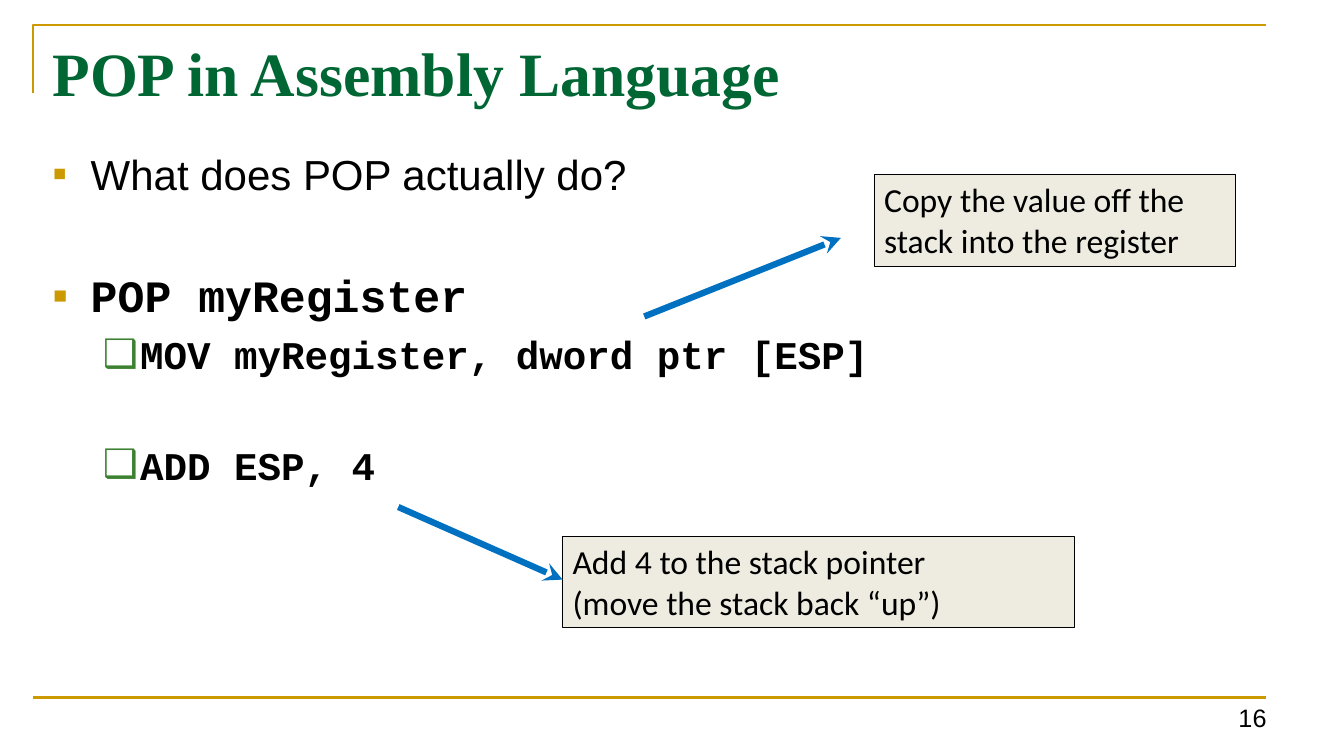
from dataclasses import dataclass

from lxml.etree import SubElement
from pptx import Presentation
from pptx.dml.color import RGBColor
from pptx.enum.shapes import MSO_CONNECTOR as Connector, MSO_SHAPE as Preset
from pptx.enum.text import MSO_ANCHOR as Anchor, MSO_AUTO_SIZE as AutoSize, PP_ALIGN as Align
from pptx.oxml.ns import qn
from pptx.util import Inches, Pt


@dataclass(frozen=True)
class Theme:
    gold: str = "CC9900"
    title_green: str = "006633"
    bullet_green: str = "3B812F"
    arrow_blue: str = "0070C0"
    note_fill: str = "EEECE1"
    black: str = "000000"
    title_font: str = "Times New Roman"
    body_font: str = "Arial"
    code_font: str = "Courier New"
    note_font: str = "Calibri"
    title_size: float = 44
    question_size: float = 30
    code_size: float = 32
    step_size: float = 28
    note_size: float = 24
    number_size: float = 18


@dataclass(frozen=True)
class Item:
    text: str
    font: str
    size: float
    bold: bool = False
    level: int = 0
    space_before: float = 0


@dataclass(frozen=True)
class Note:
    lines: tuple[str, ...]
    left: float
    top: float
    width: float
    height: float = 0.91


@dataclass(frozen=True)
class Line:
    start: tuple[float, float]
    end: tuple[float, float]
    color: str
    width: float
    arrow: bool = False


@dataclass(frozen=True)
class BulletStyle:
    char: str
    color: str
    margin: float
    hanging: float


THEME = Theme()
BULLETS = (
    BulletStyle("▪", THEME.gold, 0.38, 0.38),
    BulletStyle("❑", THEME.bullet_green, 0.87, 0.37),
)
ITEMS = (
    Item("What does POP actually do?", THEME.body_font, THEME.question_size),
    Item("POP myRegister", THEME.code_font, THEME.code_size, True, 0, 49.5),
    Item("MOV myRegister, dword ptr [ESP]", THEME.code_font, THEME.step_size, True, 1, 6.5),
    Item("ADD ESP, 4", THEME.code_font, THEME.step_size, True, 1, 45),
)
NOTES = (
    Note(("Add 4 to the stack pointer", "(move the stack back “up”)"), 5.58, 5.32, 5.08),
    Note(("Copy the value off the stack into the register",), 8.67, 1.73, 3.58),
)
FOOTER_RULE = Line((0.33, 6.92), (12.56, 6.92), THEME.gold, 1.5)
ARROWS = (
    Line((6.39, 3.14), (8.34, 2.36), THEME.arrow_blue, 4.5, True),
    Line((3.95, 5.03), (5.58, 5.75), THEME.arrow_blue, 4.5, True),
)


def rgb(color: str) -> RGBColor:
    return RGBColor.from_string(color)


def add_run(paragraph, text: str, font: str, size: float,
            color: str = THEME.black, bold: bool = False) -> None:
    run = paragraph.add_run()
    run.text = text
    run.font.name = font
    run.font.size = Pt(size)
    run.font.bold = bold
    run.font.color.rgb = rgb(color)


def place(shape, left: float, top: float, width: float, height: float) -> None:
    shape.left, shape.top = Inches(left), Inches(top)
    shape.width, shape.height = Inches(width), Inches(height)


def set_frame(frame, anchor: Anchor) -> None:
    frame.word_wrap = True
    frame.auto_size = AutoSize.NONE
    frame.vertical_anchor = anchor


def set_bullet(paragraph, style: BulletStyle) -> None:
    properties = paragraph._p.get_or_add_pPr()
    properties.set("marL", str(Inches(style.margin)))
    properties.set("indent", str(-Inches(style.hanging)))
    color = SubElement(properties, qn("a:buClr"))
    SubElement(color, qn("a:srgbClr"), val=style.color)
    SubElement(properties, qn("a:buFont"), typeface=THEME.body_font)
    SubElement(properties, qn("a:buChar"), char=style.char)


def add_item(paragraph, item: Item) -> None:
    paragraph.level = item.level
    set_bullet(paragraph, BULLETS[item.level])
    paragraph.space_before = Pt(item.space_before)
    add_run(paragraph, item.text, item.font, item.size, bold=item.bold)


def add_line(slide, line: Line) -> None:
    ends = [Inches(value) for value in (*line.start, *line.end)]
    connector = slide.shapes.add_connector(Connector.STRAIGHT, *ends)
    connector.line.color.rgb = rgb(line.color)
    connector.line.width = Pt(line.width)
    if line.arrow:
        SubElement(connector.line._get_or_add_ln(), qn("a:tailEnd"), type="stealth")
    SubElement(connector._element.spPr, qn("a:effectLst"))


def add_note(slide, note: Note) -> None:
    box = slide.shapes.add_shape(Preset.RECTANGLE, Inches(note.left), Inches(note.top),
                                 Inches(note.width), Inches(note.height))
    box.shadow.inherit = False
    box.fill.solid()
    box.fill.fore_color.rgb = rgb(THEME.note_fill)
    box.line.color.rgb = rgb(THEME.black)
    box.line.width = Pt(0.75)
    set_frame(box.text_frame, Anchor.TOP)
    paragraph = box.text_frame.paragraphs[0]
    paragraph.alignment = Align.LEFT
    for index, text in enumerate(note.lines):
        if index:
            paragraph.add_line_break()
        add_run(paragraph, text, THEME.note_font, THEME.note_size)


def add_corner(slide) -> None:
    builder = slide.shapes.build_freeform(Inches(0.33), Inches(0.92))
    builder.add_line_segments([(Inches(0.33), Inches(0.25)),
                               (Inches(12.56), Inches(0.25))], close=False)
    corner = builder.convert_to_shape()
    corner.shadow.inherit = False
    corner.fill.background()
    corner.line.color.rgb = rgb(THEME.gold)
    corner.line.width = Pt(1.5)


def main() -> None:
    deck = Presentation()
    deck.slide_width, deck.slide_height = Inches(13.33), Inches(7.5)
    slide = deck.slides.add_slide(deck.slide_layouts[1])

    # Frame and page number
    add_corner(slide)
    add_line(slide, FOOTER_RULE)
    page_number = slide.shapes.add_textbox(Inches(11.22), Inches(6.83), Inches(1.44), Inches(0.49))
    set_frame(page_number.text_frame, Anchor.BOTTOM)
    number_line = page_number.text_frame.paragraphs[0]
    number_line.alignment = Align.RIGHT
    add_run(number_line, "16", THEME.body_font, THEME.number_size)

    # Title
    title = slide.shapes.title
    place(title, 0.42, 0.3, 12.24, 1.5)
    set_frame(title.text_frame, Anchor.TOP)
    heading = title.text_frame.paragraphs[0]
    heading.alignment = Align.LEFT
    add_run(heading, "POP in Assembly Language", THEME.title_font, THEME.title_size,
            THEME.title_green, True)

    # Question and instructions
    body = slide.placeholders[1]
    place(body, 0.42, 1.42, 12.24, 5.28)
    frame = body.text_frame
    set_frame(frame, Anchor.TOP)
    for index, item in enumerate(ITEMS):
        add_item(frame.add_paragraph() if index else frame.paragraphs[0], item)

    # Explanations with arrows
    for note in NOTES:
        add_note(slide, note)
    for arrow in ARROWS:
        add_line(slide, arrow)

    deck.save("out.pptx")


if __name__ == "__main__":
    main()
